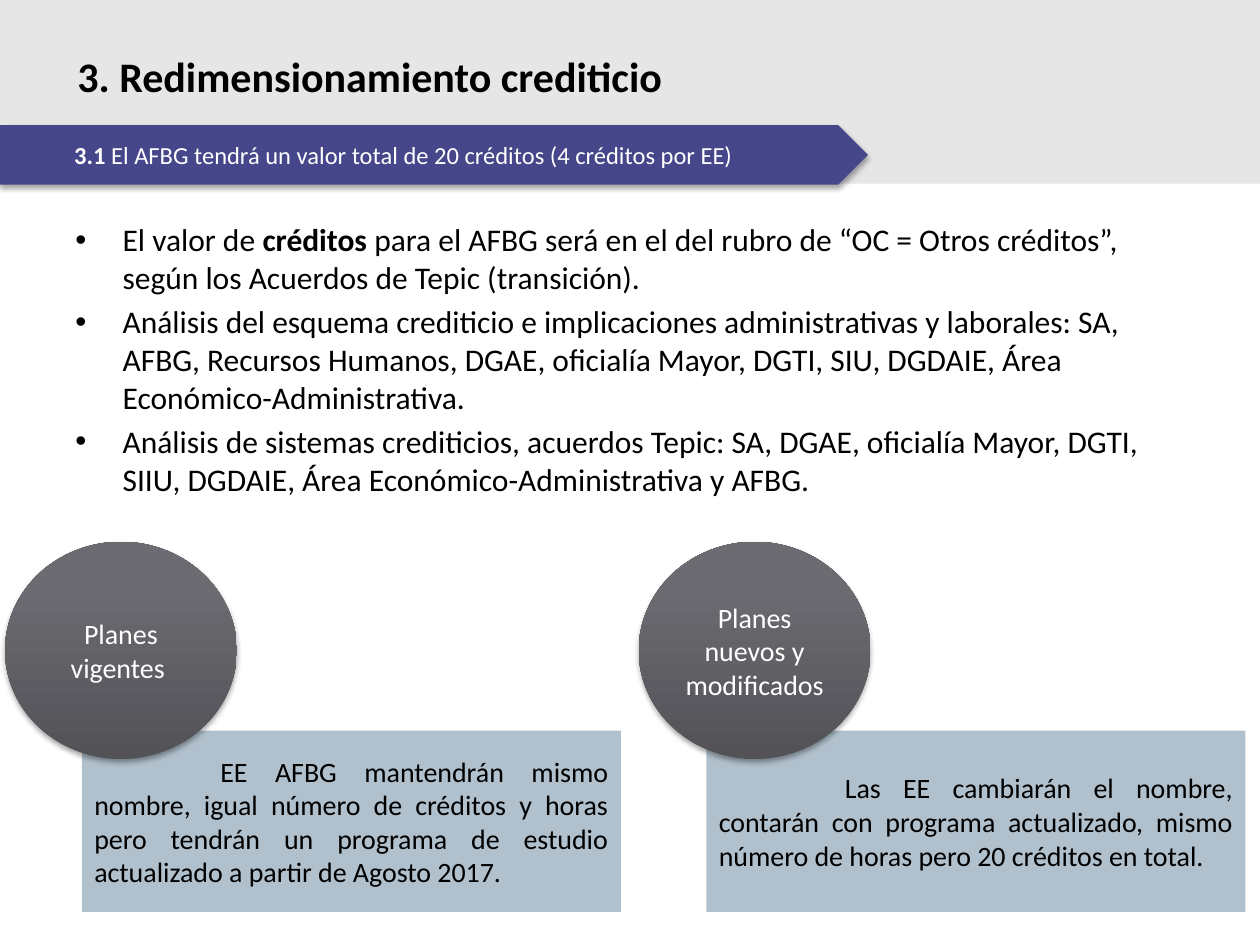
from lxml import etree
from pptx import Presentation
from pptx.dml.color import RGBColor
from pptx.enum import shapes, text
from pptx.oxml import parse_xml
from pptx.oxml.ns import nsdecls, qn
from pptx.util import Pt

SHADOW = (
    f'<a:outerShdw {nsdecls("a")} blurRad="{Pt(3.1)}" dist="{Pt(1.8)}" dir="5400000" '
    'rotWithShape="0"><a:srgbClr val="000000"><a:alpha val="35000"/></a:srgbClr></a:outerShdw>'
)
GRADIENT = [(0, "525257"), (80, "6B6B71"), (100, "6B6B72")]


def add_runs(paragraph, runs, size, color):
    """Add (wording, bold) pairs as formatted runs."""
    for wording, bold in runs:
        run = paragraph.add_run()
        run.text = wording
        run.font.name = "Calibri"
        run.font.size = Pt(size)
        run.font.bold = bold
        run.font.color.rgb = RGBColor.from_string(color)


def add_panel(kind, box, color, shadow=False):
    """Add a borderless filled shape with wrapped, vertically centred text."""
    shape = slide.shapes.add_shape(kind, *map(Pt, box))
    shape.fill.solid()
    shape.fill.fore_color.rgb = RGBColor.from_string(color)
    shape.line.fill.background()
    shape.shadow.inherit = False
    if shadow:
        shape._element.spPr.find(qn("a:effectLst")).append(parse_xml(SHADOW))
    shape.text_frame.word_wrap = True
    shape.text_frame.vertical_anchor = text.MSO_ANCHOR.MIDDLE
    return shape


presentation = Presentation()
presentation.slide_width, presentation.slide_height = Pt(720), Pt(540)
slide = presentation.slides.add_slide(presentation.slide_layouts[5])

# Header band, behind the title
band = add_panel(shapes.MSO_SHAPE.RECTANGLE, (0, 0, 720, 105), "E6E6E6")
slide.shapes._spTree.insert(2, band._element)

title = slide.shapes.title
title.left, title.top, title.width, title.height = Pt(37), Pt(14.5), Pt(556.5), Pt(57)
title.text_frame.auto_size = text.MSO_AUTO_SIZE.NONE
title.text_frame.vertical_anchor = text.MSO_ANCHOR.MIDDLE
paragraph = title.text_frame.paragraphs[0]
paragraph.alignment = text.PP_ALIGN.LEFT
add_runs(paragraph, [("3. Redimensionamiento crediticio", True)], 24, "000000")

# Subtitle arrow
arrow = add_panel(shapes.MSO_SHAPE.PENTAGON, (0, 71.5, 496, 34), "46468A", shadow=True)
paragraph = arrow.text_frame.paragraphs[0]
paragraph.alignment = text.PP_ALIGN.LEFT
paragraph._p.get_or_add_pPr().set("marL", str(Pt(35.3)))
add_runs(paragraph, [
    ("3.1 ", True),
    ("El AFBG tendrá un valor total de 20 créditos (4 créditos por EE)", False),
], 14, "FFFFFF")

# Bulleted list
bullets = [
    [("El valor de ", False), ("créditos ", True),
     ("para el AFBG será en el del rubro de “OC = Otros créditos”, "
      "según los Acuerdos de Tepic (transición).", False)],
    [("Análisis del esquema crediticio e implicaciones administrativas y laborales: SA, "
      "AFBG, Recursos Humanos, DGAE, oficialía Mayor, DGTI, SIU, DGDAIE, Área "
      "Económico-Administrativa.", False)],
    [("Análisis de sistemas crediticios, acuerdos Tepic: SA, DGAE, oficialía Mayor, DGTI, "
      "SIIU, DGDAIE, Área Económico-Administrativa y AFBG.", False)],
]
body = slide.shapes.add_textbox(Pt(36), Pt(122.4), Pt(648), Pt(385))
frame = body.text_frame
frame.word_wrap = True
for index, runs in enumerate(bullets):
    paragraph = frame.add_paragraph() if index else frame.paragraphs[0]
    properties = paragraph._p.get_or_add_pPr()
    properties.set("marL", str(Pt(27)))
    properties.set("indent", str(-Pt(27)))
    etree.SubElement(properties, qn("a:buFont")).set("typeface", "Arial")
    etree.SubElement(properties, qn("a:buChar")).set("char", "•")
    if index:
        paragraph.space_before = Pt(3.6)
    add_runs(paragraph, runs, 18, "000000")

# Plan groups: a translucent panel with a circle over its corner
plans = [
    (46.8, 2.9, "Planes vigentes ",
     "EE AFBG mantendrán mismo nombre, igual número de créditos y horas pero tendrán "
     "un programa de estudio actualizado a partir de Agosto 2017."),
    (403.7, 365, "Planes nuevos y modificados",
     "Las EE cambiarán el nombre, contarán con programa actualizado, mismo número de "
     "horas pero 20 créditos en total."),
]
for panel_left, circle_left, name, description in plans:
    panel = add_panel(shapes.MSO_SHAPE.RECTANGLE, (panel_left, 417.5, 308, 103.7), "92A9B9")
    color = panel._element.spPr.find(qn("a:solidFill"))[0]
    etree.SubElement(color, qn("a:alpha")).set("val", "72000")
    paragraph = panel.text_frame.paragraphs[0]
    paragraph.alignment = text.PP_ALIGN.JUSTIFY
    paragraph._p.get_or_add_pPr().set("indent", str(Pt(72)))
    add_runs(paragraph, [(description, False)], 16, "000000")

    circle = add_panel(shapes.MSO_SHAPE.OVAL, (circle_left, 309.6, 132.5, 124.2),
                       GRADIENT[0][1], shadow=True)
    circle.fill.gradient()
    circle.fill.gradient_angle = 90
    stops = circle._element.spPr.find(qn("a:gradFill")).find(qn("a:gsLst"))
    for stop in list(stops):
        stops.remove(stop)
    for position, tone in GRADIENT:
        stop = etree.SubElement(stops, qn("a:gs"), pos=str(position * 1000))
        etree.SubElement(stop, qn("a:srgbClr"), val=tone)
    paragraph = circle.text_frame.paragraphs[0]
    paragraph.alignment = text.PP_ALIGN.CENTER
    add_runs(paragraph, [(name, False)], 16, "FFFFFF")

presentation.save("out.pptx")
